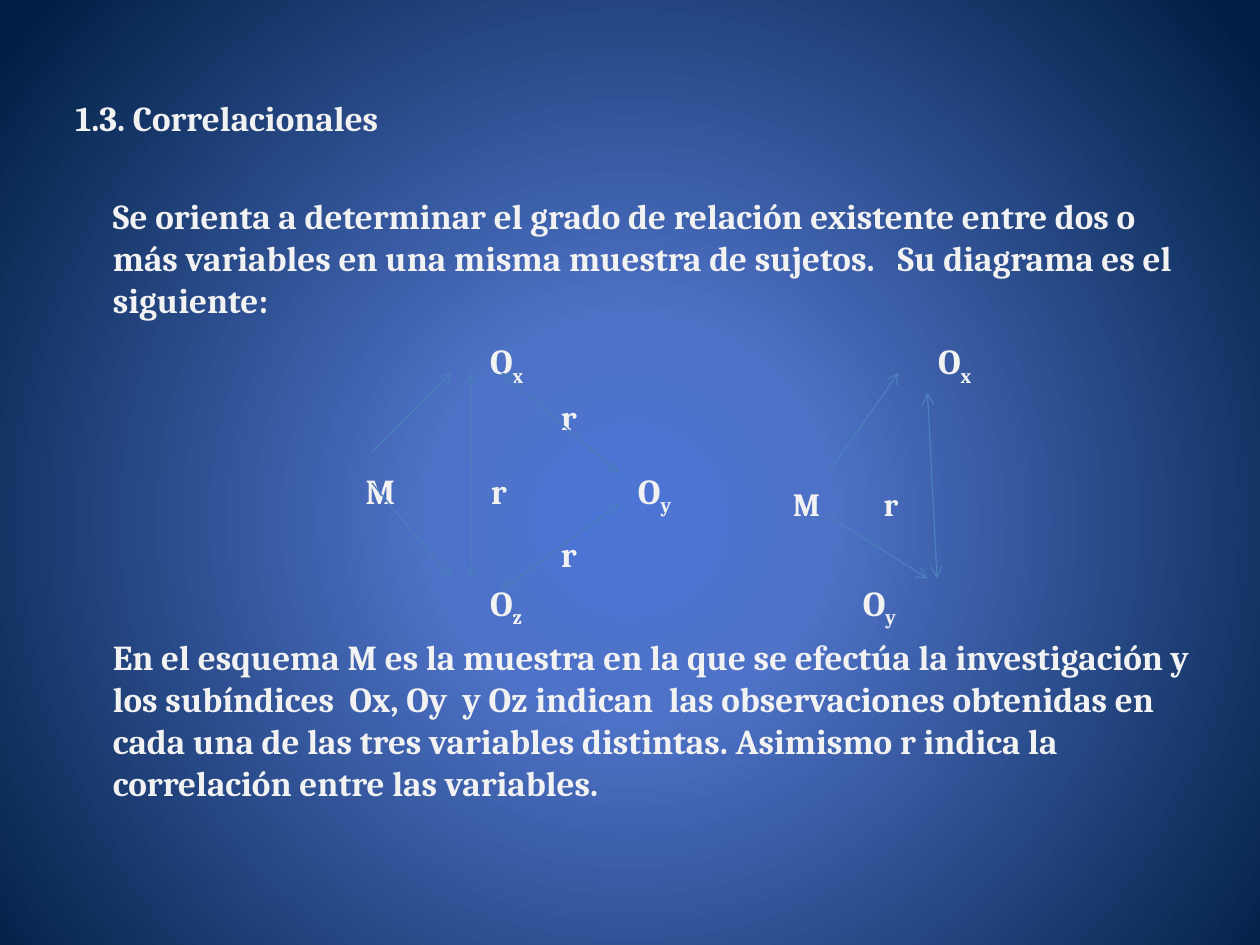
from dataclasses import dataclass

from lxml import etree
from pptx import Presentation
from pptx.dml.color import RGBColor
from pptx.enum.shapes import MSO_CONNECTOR
from pptx.enum.text import MSO_ANCHOR, MSO_AUTO_SIZE, PP_ALIGN
from pptx.oxml.ns import qn
from pptx.util import Pt

STRAIGHT = MSO_CONNECTOR.STRAIGHT
TOP = MSO_ANCHOR.TOP
NO_AUTOFIT = MSO_AUTO_SIZE.NONE
LEFT = PP_ALIGN.LEFT
TITLE_ONLY = 5


@dataclass(frozen=True)
class Theme:
    font: str = "Cambria"
    text: str = "F2F2F2"
    line: str = "4B7EBC"
    gradient: tuple = ((0, "4D75D6"), (25, "4E72C7"), (100, "001F44"))
    size: float = 20
    small_size: float = 18.5
    line_height: float = 24
    line_width: float = 0.75


class SlideBuilder:
    def __init__(self, slide, theme):
        self.slide = slide
        self.theme = theme

    def background(self):
        """Radial gradient centred a little below the middle."""
        self.slide.background.fill.gradient()
        gradient = self.slide.element.find(".//" + qn("a:gradFill"))
        for child in list(gradient):
            gradient.remove(child)
        stops = etree.SubElement(gradient, qn("a:gsLst"))
        for position, color in self.theme.gradient:
            stop = etree.SubElement(stops, qn("a:gs"), pos=str(position * 1000))
            etree.SubElement(stop, qn("a:srgbClr"), val=color)
        circle = etree.SubElement(gradient, qn("a:path"), path="circle")
        etree.SubElement(circle, qn("a:fillToRect"),
                         l="10000", t="110000", r="10000", b="100000")

    def format_frame(self, shape, wrap=True):
        frame = shape.text_frame
        frame.auto_size = NO_AUTOFIT
        frame.word_wrap = wrap
        frame.vertical_anchor = TOP
        frame.margin_left = frame.margin_right = 0
        frame.margin_top = frame.margin_bottom = 0
        return frame.paragraphs[0]

    def format_paragraph(self, paragraph, size=None):
        paragraph.alignment = LEFT
        font = paragraph.font
        font.name = self.theme.font
        font.size = Pt(size or self.theme.size)
        font.bold = True
        font.color.rgb = RGBColor.from_string(self.theme.text)

    def title(self, text, left, top, width):
        shape = self.slide.shapes.title
        shape.left, shape.top = Pt(left), Pt(top)
        shape.width, shape.height = Pt(width), Pt(self.theme.line_height)
        paragraph = self.format_frame(shape)
        paragraph.text = text
        self.format_paragraph(paragraph)

    def body(self, text, left, top, width, lines):
        shape = self.slide.shapes.add_textbox(
            Pt(left), Pt(top), Pt(width), Pt(lines * self.theme.line_height))
        paragraph = self.format_frame(shape)
        paragraph.text = text
        self.format_paragraph(paragraph)

    def label(self, text, subscript, left, middle, size=None):
        height = self.theme.line_height
        shape = self.slide.shapes.add_textbox(
            Pt(left), Pt(middle - height / 2), Pt(24), Pt(height))
        paragraph = self.format_frame(shape, wrap=False)
        paragraph.add_run().text = text
        if subscript:
            run = paragraph.add_run()
            run.text = subscript
            run.font._element.set("baseline", "-25000")
        self.format_paragraph(paragraph, size)

    def arrow(self, start, end, double=False):
        connector = self.slide.shapes.add_connector(
            STRAIGHT, Pt(start[0]), Pt(start[1]), Pt(end[0]), Pt(end[1]))
        connector.line.color.rgb = RGBColor.from_string(self.theme.line)
        connector.line.width = Pt(self.theme.line_width)
        properties = connector._element.spPr
        line = properties.find(qn("a:ln"))
        if double:
            etree.SubElement(line, qn("a:headEnd"), type="arrow")
        etree.SubElement(line, qn("a:tailEnd"), type="arrow")
        etree.SubElement(properties, qn("a:effectLst"))


def main():
    presentation = Presentation()
    presentation.slide_width, presentation.slide_height = Pt(720), Pt(540)
    slide = presentation.slides.add_slide(presentation.slide_layouts[TITLE_ONLY])
    theme = Theme()
    builder = SlideBuilder(slide, theme)
    builder.background()

    # Heading and explanations
    builder.title("1.3. Correlacionales", 43, 55, 640)
    builder.body(
        "Se orienta a determinar el grado de relación existente entre dos o más "
        "variables en una misma muestra de sujetos.   Su diagrama es el siguiente:",
        64.5, 111, 626, 3)
    builder.body(
        "En el esquema M es la muestra en la que se efectúa la investigación y los "
        "subíndices  Ox, Oy  y Oz indican  las observaciones obtenidas en cada una "
        "de las tres variables distintas. Asimismo r indica la correlación entre "
        "las variables.",
        64.5, 363, 626, 4)

    # Labels of the three-variable diagram
    for text, subscript, left, middle in (
            ("O", "x", 280, 206), ("r", "", 320.5, 238),
            ("M", "", 209, 280), ("r", "", 280.5, 280), ("O", "y", 364.5, 280),
            ("r", "", 320.5, 316), ("O", "z", 280, 344)):
        builder.label(text, subscript, left, middle)

    # Labels of the two-variable diagram
    builder.label("O", "x", 536, 206)
    builder.label("M", "", 453, 288.5, theme.small_size)
    builder.label("r", "", 505, 288.5, theme.small_size)
    builder.label("O", "y", 493, 344)

    # Arrows from the sample to its observations
    upper, lower = 213, 330.5
    for start, end in (
            ((212.5, 258.5), (258, upper)), ((212.5, 276), (258, lower)),
            ((473, 294.5), (530, lower)), ((473, 270.5), (513.5, upper))):
        builder.arrow(start, end)

    # Two-way arrows for the correlations
    for start, end in (
            ((269.5, upper), (269.5, lower)), ((286.5, upper), (354, 270.5)),
            ((286.5, 337), (354, 288)), ((530, 224.5), (535.5, lower))):
        builder.arrow(start, end, double=True)

    presentation.save("out.pptx")


if __name__ == "__main__":
    main()
